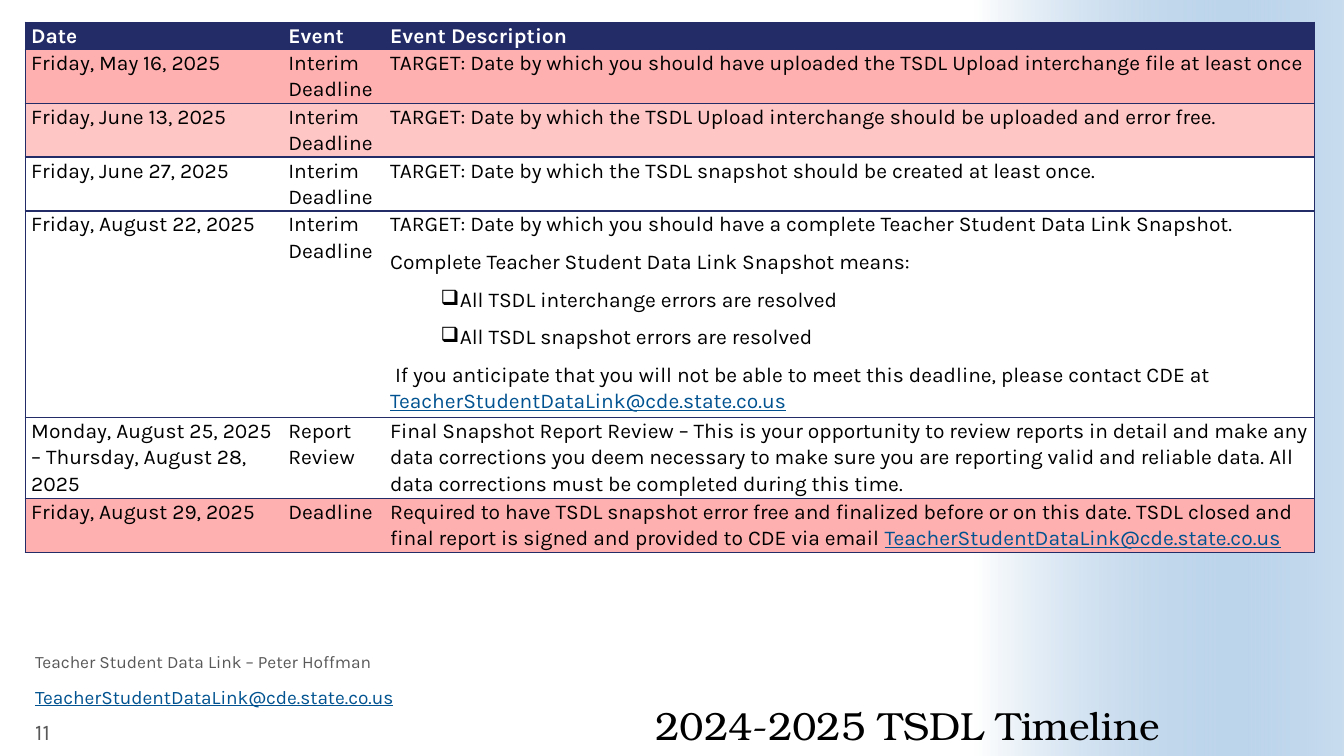
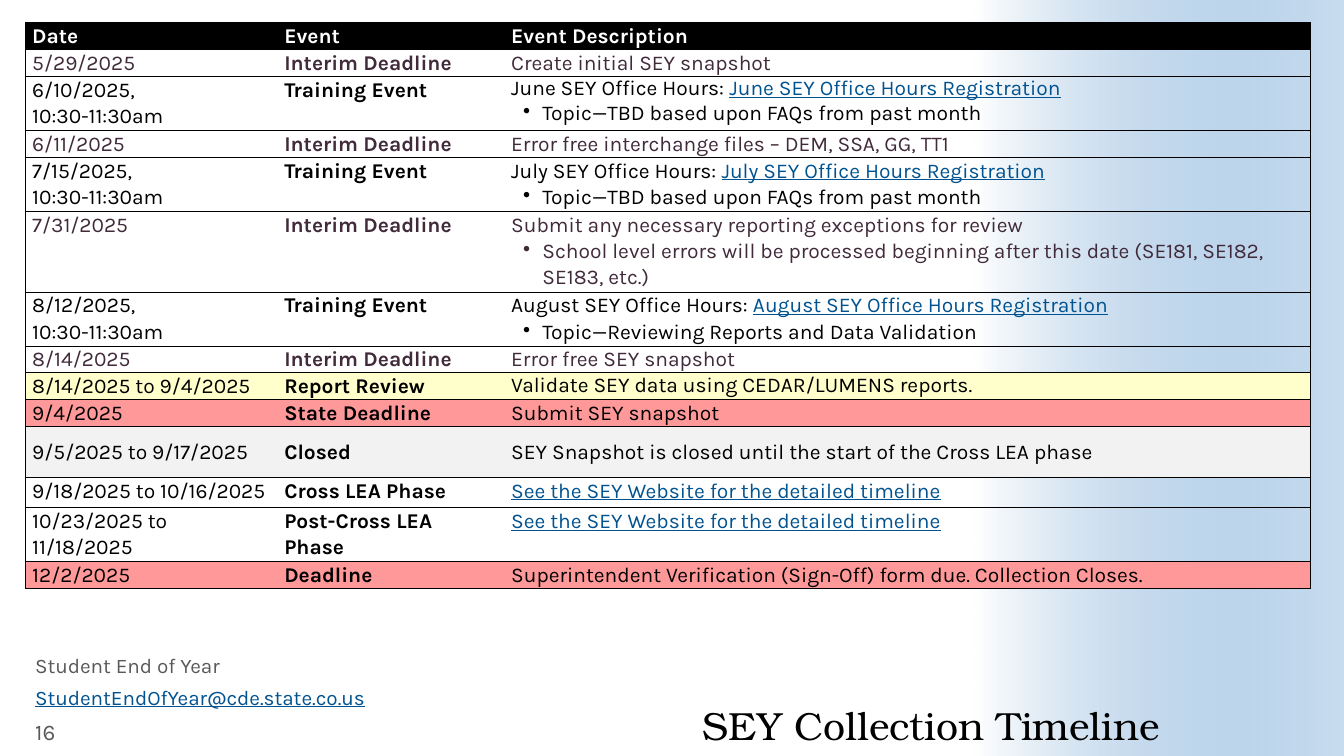
from lxml import etree
from pptx import Presentation
from pptx.dml.color import RGBColor
from pptx.enum.shapes import MSO_SHAPE
from pptx.enum.text import MSO_ANCHOR, PP_ALIGN
from pptx.oxml.ns import qn
from pptx.util import Inches, Pt

RECTANGLE = MSO_SHAPE.RECTANGLE
TOP, MIDDLE, BOTTOM = MSO_ANCHOR.TOP, MSO_ANCHOR.MIDDLE, MSO_ANCHOR.BOTTOM
LEFT, RIGHT = PP_ALIGN.LEFT, PP_ALIGN.RIGHT

# Shared look
WIDTH, HEIGHT = 13.33, 7.5
BAND_WIDTH = 3.66
BLACK, WHITE, NAVY, GREY = "000000", "FFFFFF", "232C67", "595959"
LINK, PLUM, BAND_BLUE = "005390", "412A3A", "488BC9"
ROSE, PINK, RED, YELLOW, PALE = "FEB0B0", "FFC6C6", "FF9999", "FFFFCC", "F2F2F2"
BODY_FONT, TITLE_FONT = "Karla", "TeX Gyre Bonum"
NO_STYLE = "{2D5ABB26-0587-4C30-8999-92F81FD0307C}"
TABLE_LEFT, TABLE_TOP, TABLE_SIZE, TABLE_SPACING = 0.25, 0.22, 15, 1.07
HEADINGS = ["Date", "Event", "Event Description"]

# Content: a row is (height, fill, ink, cells); a cell is one line or a list of
# lines; a line is a string or a dict with text, link, bullet and spacing
TSDL_MAIL = "TeacherStudentDataLink@cde.state.co.us"
TSDL_ROWS = [
    (0.19, NAVY, WHITE, HEADINGS),
    (0.29, ROSE, BLACK, [
        "Friday, May 16, 2025", "Interim Deadline",
        "TARGET: Date by which you should have uploaded the TSDL Upload interchange file at least once"]),
    (0.29, PINK, BLACK, [
        "Friday, June 13, 2025", "Interim Deadline",
        "TARGET: Date by which the TSDL Upload interchange should be uploaded and error free."]),
    (0.29, WHITE, BLACK, [
        "Friday, June 27, 2025", "Interim Deadline",
        "TARGET: Date by which the TSDL snapshot should be created at least once."]),
    (1.58, WHITE, BLACK, [
        "Friday, August 22, 2025", "Interim Deadline",
        ["TARGET: Date by which you should have a complete Teacher Student Data Link Snapshot.",
         "Complete Teacher Student Data Link Snapshot means:",
         {"bullet": "❑", "text": "All TSDL interchange errors are resolved"},
         {"bullet": "❑", "text": "All TSDL snapshot errors are resolved"},
         {"text": " If you anticipate that you will not be able to meet this deadline, "
                  "please contact CDE at ", "link": TSDL_MAIL}]]),
    (0.46, WHITE, BLACK, [
        "Monday, August 25, 2025 – Thursday, August 28, 2025", "Report Review",
        "Final Snapshot Report Review – This is your opportunity to review reports in detail and make "
        "any data corrections you deem necessary to make sure you are reporting valid and reliable "
        "data. All data corrections must be completed during this time."]),
    (0.44, ROSE, BLACK, [
        "Friday, August 29, 2025", "Deadline",
        {"text": "Required to have TSDL snapshot error free and finalized before or on this date. TSDL "
                 "closed and final report is signed and provided to CDE via email ", "link": TSDL_MAIL}]),
]

FAQ_TOPIC = {"bullet": "•", "text": "Topic—TBD based upon FAQs from past month"}
SEY_SITE = {"link": "See the SEY Website for the detailed timeline"}
SEY_ROWS = [
    (0.19, BLACK, WHITE, HEADINGS),
    (0.19, None, PLUM, ["5/29/2025", "Interim Deadline", "Create initial SEY snapshot"]),
    (0.3, None, BLACK, [
        "6/10/2025,\n10:30-11:30am", "Training Event",
        [{"text": "June SEY Office Hours: ", "link": "June SEY Office Hours Registration", "spacing": 1.0},
         {**FAQ_TOPIC, "spacing": 1.0}]]),
    (0.19, None, PLUM, [
        "6/11/2025", "Interim Deadline", "Error free interchange files – DEM, SSA, GG, TT1"]),
    (0.3, None, BLACK, [
        "7/15/2025,\n10:30-11:30am", "Training Event",
        [{"text": "July SEY Office Hours: ", "link": "July SEY Office Hours Registration"}, FAQ_TOPIC]]),
    (0.4, None, PLUM, [
        "7/31/2025", "Interim Deadline",
        ["Submit any necessary reporting exceptions for review",
         {"bullet": "•", "text": "School level errors will be processed beginning after this date "
                                 "(SE181, SE182, SE183, etc.)"}]]),
    (0.4, None, BLACK, [
        "8/12/2025,\n10:30-11:30am", "Training Event",
        [{"text": "August SEY Office Hours: ", "link": "August SEY Office Hours Registration"},
         {"bullet": "•", "text": "Topic—Reviewing Reports and Data Validation"}]]),
    (0.19, None, PLUM, ["8/14/2025", "Interim Deadline", "Error free SEY snapshot"]),
    (0.19, YELLOW, BLACK, [
        "8/14/2025 to 9/4/2025", "Report Review",
        {"text": "Validate SEY data using CEDAR/LUMENS reports.", "spacing": 1.0}]),
    (0.19, RED, BLACK, ["9/4/2025", "State Deadline", "Submit SEY snapshot"]),
    (0.5, PALE, BLACK, [
        "9/5/2025 to 9/17/2025", "Closed",
        "SEY Snapshot is closed until the start of the Cross LEA phase"]),
    (0.3, None, BLACK, ["9/18/2025 to 10/16/2025", "Cross LEA Phase", SEY_SITE]),
    (0.4, None, BLACK, ["10/23/2025 to 11/18/2025", "Post-Cross LEA Phase", SEY_SITE]),
    (0.19, RED, BLACK, [
        "12/2/2025", "Deadline",
        "Superintendent Verification (Sign-Off) form due. Collection Closes."]),
]

# Footer lines are (text, size, line spacing)
PAGES = [
    {"title": "2024-2025 TSDL Timeline", "number": "11",
     "contact": ("Teacher Student Data Link – Peter Hoffman", 12.4, 0.7),
     "mail": (TSDL_MAIL, 13.6, 0.8),
     "table": {"rows": TSDL_ROWS, "columns": [2.55, 1.01, 9.23], "line": (NAVY, 1), "inset": 0.06,
               "after": 8, "indent": 0.69, "bold_columns": [], "middle_rows": []}},
    {"title": "SEY Collection Timeline", "number": "16",
     "contact": ("Student End of Year", 14.8, 0.8),
     "mail": ("StudentEndOfYear@cde.state.co.us", 14.8, 0.8),
     "table": {"rows": SEY_ROWS, "columns": [2.5, 2.25, 8], "line": (BLACK, 0.5), "inset": 0.07,
               "after": 0, "indent": 0.31, "bold_columns": [1], "middle_rows": [10]}},
]


def rgb(value):
    return RGBColor.from_string(value)


def set_all(target, values):
    for name, value in values.items():
        setattr(target, name, value)


def add_span(para, text, color, size, font=BODY_FONT, **extra):
    """Add a run, turning each newline into a line break."""
    for index, part in enumerate(text.split("\n")):
        if index:
            para.add_line_break()
        span = para.add_run()
        span.text = part
        set_all(span.font, {"name": font, "size": Pt(size), **extra})
        span.font.color.rgb = rgb(color)


def add_text(page, area, text, color, size, font=BODY_FONT, anchor=TOP,
             align=LEFT, spacing=1.0, inset=(0.1, 0.05), underline=False):
    box = page.shapes.add_textbox(*map(Inches, area))
    across, down = map(Inches, inset)
    set_all(box.text_frame, {"word_wrap": True, "vertical_anchor": anchor,
                             "margin_left": across, "margin_right": across,
                             "margin_top": down, "margin_bottom": down})
    para = box.text_frame.paragraphs[0]
    set_all(para, {"alignment": align, "line_spacing": spacing})
    add_span(para, text, color, size, font, underline=underline)


def add_band(page):
    """Fade from white to blue along the right edge, drawn as a turned rectangle."""
    left = WIDTH - BAND_WIDTH / 2 - HEIGHT / 2
    top = (HEIGHT - BAND_WIDTH) / 2
    band = page.shapes.add_shape(RECTANGLE, *map(Inches, (left, top, HEIGHT, BAND_WIDTH)))
    band.rotation = 270
    band.shadow.inherit = False
    band.line.fill.background()
    band.fill.gradient()
    band.fill.gradient_angle = 270
    for stop, color in zip(band.fill.gradient_stops, (WHITE, BAND_BLUE)):
        stop.color.rgb = rgb(color)
    blue = band.fill._fill._gradFill.findall(".//" + qn("a:srgbClr"))[-1]
    etree.SubElement(blue, qn("a:alpha"), val="30000")


def add_borders(cell, sides, line):
    color, weight = line
    properties = cell._tc.get_or_add_tcPr()
    for side in sides:
        border = etree.SubElement(properties, qn("a:ln" + side), w=str(Pt(weight)))
        solid = etree.SubElement(border, qn("a:solidFill"))
        etree.SubElement(solid, qn("a:srgbClr"), val=color)


def write_line(para, line, ink, bold, table):
    if isinstance(line, str):
        line = {"text": line}
    if "bullet" in line:
        properties = para._p.get_or_add_pPr()
        properties.set("marL", str(Inches(table["indent"])))
        properties.set("indent", str(Inches(-0.19)))
        etree.SubElement(properties, qn("a:buChar"), char=line["bullet"])
    set_all(para, {"line_spacing": line.get("spacing", TABLE_SPACING),
                   "space_after": Pt(table["after"])})
    if "text" in line:
        add_span(para, line["text"], ink, TABLE_SIZE, bold=bold)
    if "link" in line:
        add_span(para, line["link"], LINK, TABLE_SIZE, bold=bold, underline=True)


def add_timeline(page, table):
    rows, columns = table["rows"], table["columns"]
    area = (TABLE_LEFT, TABLE_TOP, sum(columns), sum(row[0] for row in rows))
    grid = page.shapes.add_table(len(rows), len(columns), *map(Inches, area)).table
    set_all(grid, {"first_row": False, "horz_banding": False})
    grid._tbl.tblPr.find(qn("a:tableStyleId")).text = NO_STYLE
    for column, width in zip(grid.columns, columns):
        column.width = Inches(width)
    inset = Inches(table["inset"])
    for row_index, (height, fill, ink, cells) in enumerate(rows):
        grid.rows[row_index].height = Inches(height)
        for column_index, lines in enumerate(cells):
            cell = grid.cell(row_index, column_index)
            anchor = MIDDLE if row_index in table["middle_rows"] else TOP
            set_all(cell, {"margin_left": inset, "margin_right": inset, "margin_top": 0,
                           "margin_bottom": 0, "vertical_anchor": anchor})
            # Outer edges and row rules only
            add_borders(cell, ("LTB", "TB", "RTB")[column_index], table["line"])
            if fill:
                cell.fill.solid()
                cell.fill.fore_color.rgb = rgb(fill)
            else:
                cell.fill.background()
            bold = row_index == 0 or column_index in table["bold_columns"]
            frame = cell.text_frame
            for index, line in enumerate(lines if isinstance(lines, list) else [lines]):
                para = frame.add_paragraph() if index else frame.paragraphs[0]
                write_line(para, line, ink, bold, table)


def add_page(deck, content):
    page = deck.slides.add_slide(deck.slide_layouts[6])
    add_band(page)
    add_text(page, (4.26, 6.45, 7.24, 0.98), content["title"], BLACK, 28, TITLE_FONT,
             anchor=BOTTOM, align=RIGHT, spacing=0.9, inset=(0, 0))
    add_timeline(page, content["table"])
    # Footer
    text, size, spacing = content["contact"]
    add_text(page, (0.25, 6.47, 3.89, 0.31), text, GREY, size, spacing=spacing)
    text, size, spacing = content["mail"]
    add_text(page, (0.25, 6.79, 3.89, 0.31), text, LINK, size, spacing=spacing, underline=True)
    add_text(page, (0.25, 7.1, 0.85, 0.31), content["number"], GREY, 16, anchor=MIDDLE)


def main():
    deck = Presentation()
    set_all(deck, {"slide_width": Inches(WIDTH), "slide_height": Inches(HEIGHT)})
    for content in PAGES:
        add_page(deck, content)
    deck.save("out.pptx")


if __name__ == "__main__":
    main()
